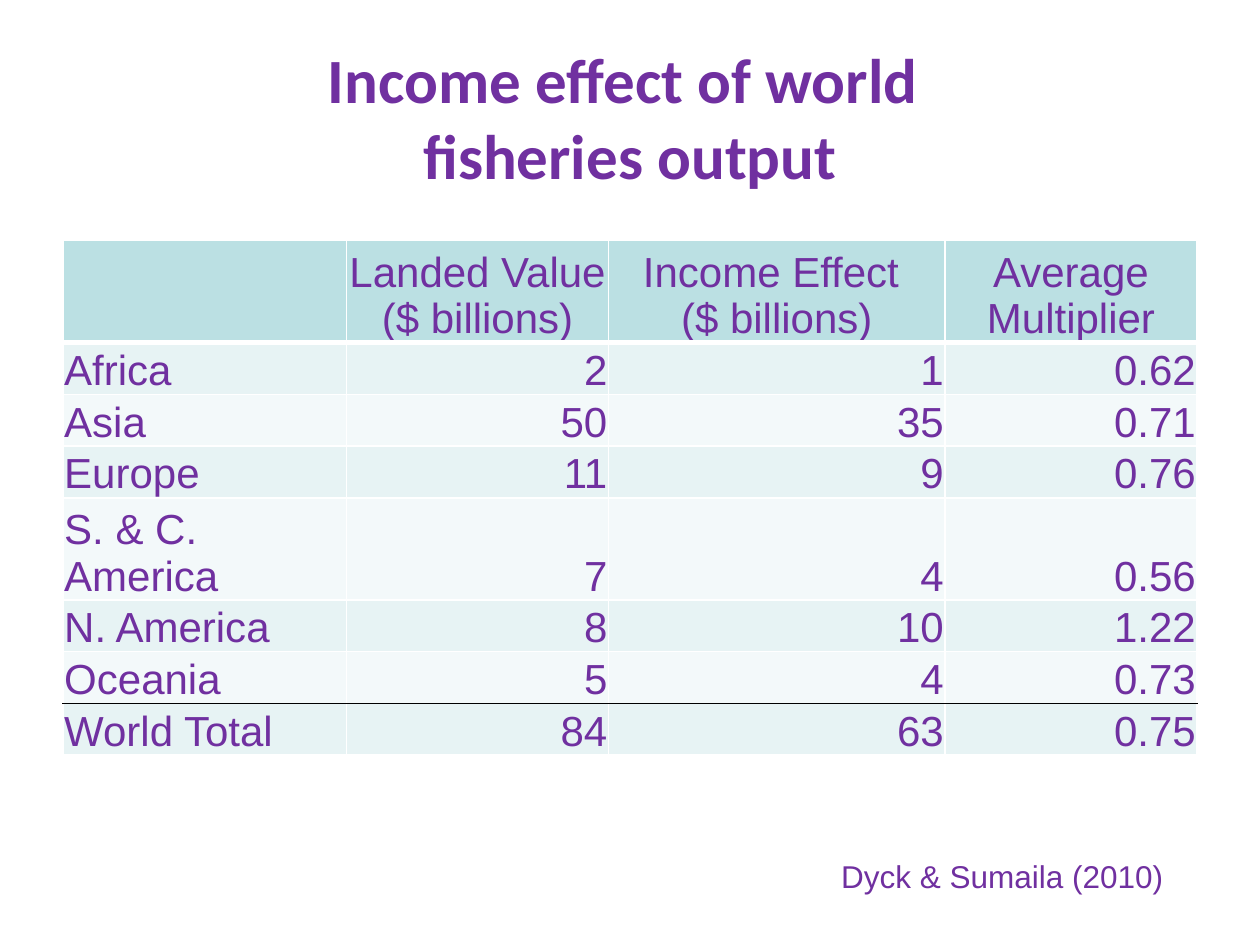
from lxml import etree
from pptx import Presentation
from pptx import util as u
from pptx.dml.color import RGBColor
from pptx.enum import text
from pptx.oxml.ns import qn

COLORS = {"purple": "7030A0", "header": "BBE0E3", "odd": "E7F3F4",
          "even": "F3F9FA", "grid": "FFFFFF", "rule": "000000"}
LEFT, CENTER, RIGHT = text.PP_ALIGN.LEFT, text.PP_ALIGN.CENTER, text.PP_ALIGN.RIGHT


def write(frame, wording, size=24, font="Arial", bold=False, align=LEFT):
    frame.text = wording
    for paragraph in frame.paragraphs:
        paragraph.alignment = align
        for run in paragraph.runs:
            run.font.size = u.Pt(size)
            run.font.name = font
            run.font.bold = bold
            run.font.color.rgb = RGBColor.from_string(COLORS["purple"])


def add_border(cell, side, color, points):
    line = etree.SubElement(cell._tc.get_or_add_tcPr(), qn(f"a:ln{side}"),
                            w=str(u.Pt(points)))
    fill = etree.SubElement(line, qn("a:solidFill"))
    etree.SubElement(fill, qn("a:srgbClr"), val=COLORS[color])


deck = Presentation()
deck.slide_width, deck.slide_height = u.Inches(10), u.Inches(7.5)
W, H = deck.slide_width, deck.slide_height
slide = deck.slides.add_slide(deck.slide_layouts[6])
margin = int(W * 0.05)

# Title
title = slide.shapes.add_textbox(margin, int(H * 0.04), W - 2 * margin, u.Inches(1.25)).text_frame
title.word_wrap = True
title.vertical_anchor = text.MSO_ANCHOR.MIDDLE
write(title, "Income effect of world \vfisheries output",
      size=36, font="Calibri", bold=True, align=CENTER)

# Table of regions
regions = [
    ["", "Landed Value ($ billions)", "Income Effect \n($ billions)", "Average Multiplier"],
    ["Africa", "2", "1", "0.62"],
    ["Asia", "50", "35", "0.71"],
    ["Europe", "11", "9", "0.76"],
    ["S. & C. America", "7", "4", "0.56"],
    ["N. America", "8", "10", "1.22"],
    ["Oceania", "5", "4", "0.73"],
    ["World Total", "84", "63", "0.75"],
]
row_height = u.Inches(0.41)
total = len(regions) - 1
table = slide.shapes.add_table(len(regions), 4, margin, u.Inches(1.91), W - 2 * margin,
                               row_height * len(regions)).table
for column, width in zip(table.columns, (2.25, 2.08, 2.67, 2)):
    column.width = u.Inches(width)

for r, values in enumerate(regions):
    for c, value in enumerate(values):
        cell = table.cell(r, c)
        cell.margin_left = cell.margin_right = cell.margin_top = u.Inches(0.01)
        cell.margin_bottom = 0
        cell.vertical_anchor = text.MSO_ANCHOR.BOTTOM
        write(cell.text_frame, value, align=CENTER if r == 0 else RIGHT if c else LEFT)

        # White grid, thick under the header, black above the total
        add_border(cell, "L", "grid", 1)
        add_border(cell, "R", "grid", 1)
        add_border(cell, "T", "rule" if r == total else "grid", 3 if r == 1 else 1)
        add_border(cell, "B", "rule" if r == total - 1 else "grid", 3 if r == 0 else 1)

        band = "header" if r == 0 else "odd" if r % 2 else "even"
        cell.fill.solid()
        cell.fill.fore_color.rgb = RGBColor.from_string(COLORS[band])

# Citation
citation = slide.shapes.add_textbox(int(W * 0.655), int(H * 0.9), int(W * 0.285),
                                    u.Inches(0.4)).text_frame
citation.word_wrap = False
citation.auto_size = text.MSO_AUTO_SIZE.SHAPE_TO_FIT_TEXT
write(citation, "Dyck & Sumaila (2010) ", size=18, align=RIGHT)

deck.save("out.pptx")
